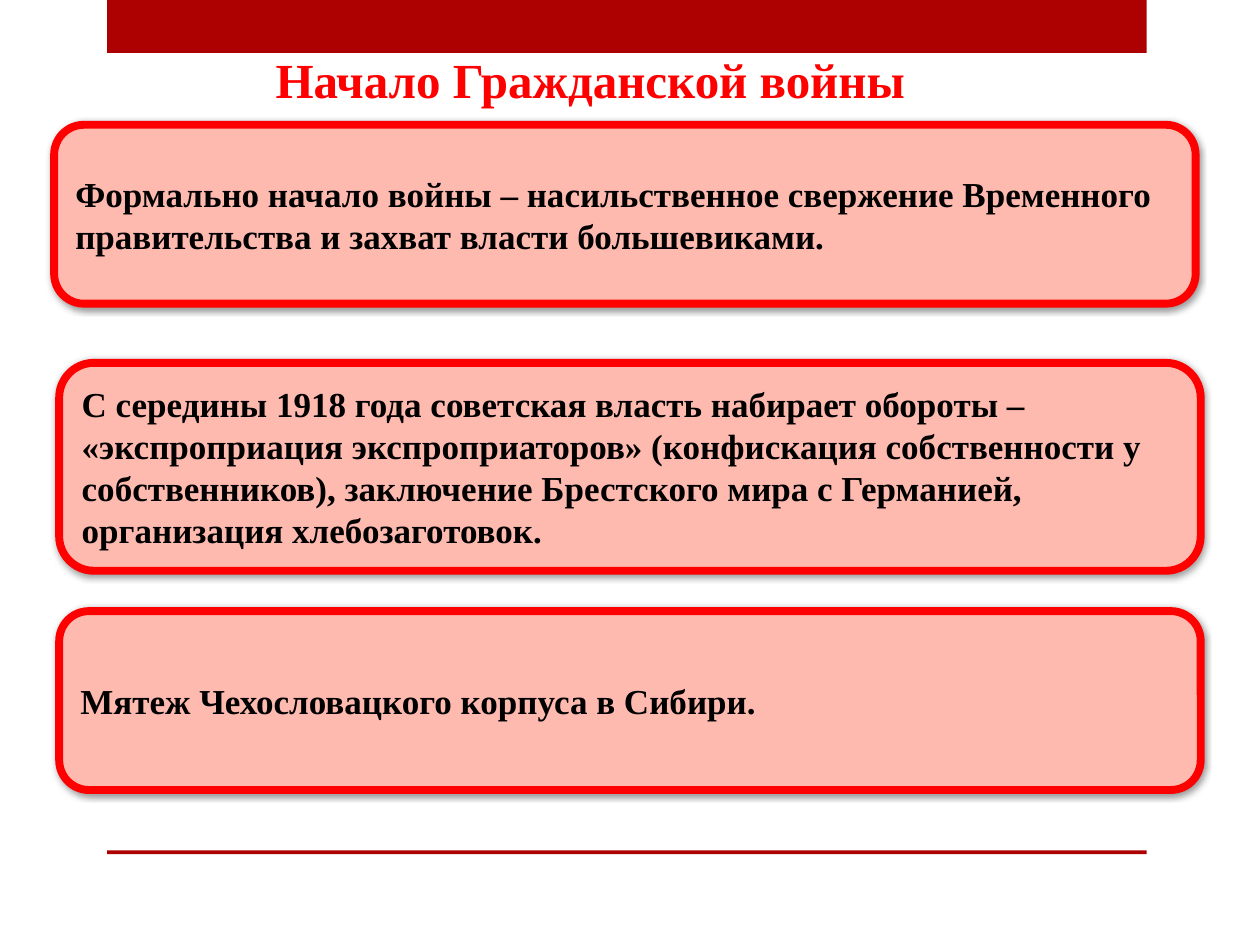
from dataclasses import dataclass

from lxml import etree
from pptx import Presentation
from pptx.dml.color import RGBColor
from pptx.enum.shapes import MSO_SHAPE
from pptx.enum.text import MSO_ANCHOR, PP_ALIGN
from pptx.oxml.ns import qn
from pptx.util import Pt

RECTANGLE = MSO_SHAPE.RECTANGLE
ROUNDED = MSO_SHAPE.ROUNDED_RECTANGLE
MIDDLE = MSO_ANCHOR.MIDDLE
LEFT = PP_ALIGN.LEFT
EMU_PER_PX = 9144


@dataclass(frozen=True)
class Theme:
    font: str = "Times New Roman"
    band: str = "AD0101"
    accent: str = "FF0000"
    card: str = "FFBAB0"
    text: str = "000000"
    title_size: int = 28
    body_size: int = 20
    border: float = 4.5


@dataclass(frozen=True)
class Area:
    left: int
    top: int
    width: int
    height: int

    def emu(self) -> list[int]:
        return [side * EMU_PER_PX for side in (self.left, self.top, self.width, self.height)]


@dataclass(frozen=True)
class Card:
    area: Area
    text: str


THEME = Theme()
BANDS = [Area(85, 0, 825, 42), Area(85, 675, 825, 3)]
TITLE = Card(Area(209, 34, 554, 57), "Начало Гражданской войны")
CARDS = [
    Card(
        Area(43, 99, 906, 142),
        "Формально начало войны – насильственное свержение Временного "
        "правительства и захват власти большевиками.",
    ),
    Card(
        Area(47, 288, 906, 165),
        "С середины 1918 года советская власть набирает обороты – "
        "«экспроприация экспроприаторов» (конфискация собственности у "
        "собственников), заключение Брестского мира с Германией, "
        "организация хлебозаготовок.",
    ),
    Card(Area(47, 485, 906, 142), "Мятеж Чехословацкого корпуса в Сибири."),
]


def write_text(box, text: str, size: int, color: str) -> None:
    frame = box.text_frame
    frame.word_wrap = True
    frame.text = text
    paragraph = frame.paragraphs[0]
    paragraph.alignment = LEFT
    font = paragraph.runs[0].font
    font.name = THEME.font
    font.size = Pt(size)
    font.bold = True
    font.color.rgb = RGBColor.from_string(color)


def add_filled(page, kind, area: Area, color: str):
    box = page.shapes.add_shape(kind, *area.emu())
    box.shadow.inherit = False
    box.fill.solid()
    box.fill.fore_color.rgb = RGBColor.from_string(color)
    box.line.fill.background()
    return box


def add_shadow(box) -> None:
    effects = box._element.spPr.find(qn("a:effectLst"))
    shadow = etree.SubElement(
        effects,
        qn("a:outerShdw"),
        blurRad=str(Pt(4)),
        dist=str(Pt(1)),
        dir=str(88 * 60000),
        rotWithShape="0",
    )
    color = etree.SubElement(shadow, qn("a:srgbClr"), val=THEME.text)
    etree.SubElement(color, qn("a:alpha"), val="40000")


def add_card(page, card: Card) -> None:
    box = add_filled(page, ROUNDED, card.area, THEME.card)
    box.line.color.rgb = RGBColor.from_string(THEME.accent)
    box.line.width = Pt(THEME.border)
    add_shadow(box)
    box.text_frame.vertical_anchor = MIDDLE
    write_text(box, card.text, THEME.body_size, THEME.text)


def main() -> None:
    deck = Presentation()
    deck.slide_width = 1000 * EMU_PER_PX
    deck.slide_height = 750 * EMU_PER_PX
    page = deck.slides.add_slide(deck.slide_layouts[6])
    for band in BANDS:
        add_filled(page, RECTANGLE, band, THEME.band)
    for card in CARDS:
        add_card(page, card)
    title = page.shapes.add_textbox(*TITLE.area.emu())
    write_text(title, TITLE.text, THEME.title_size, THEME.accent)
    deck.save("out.pptx")


if __name__ == "__main__":
    main()
